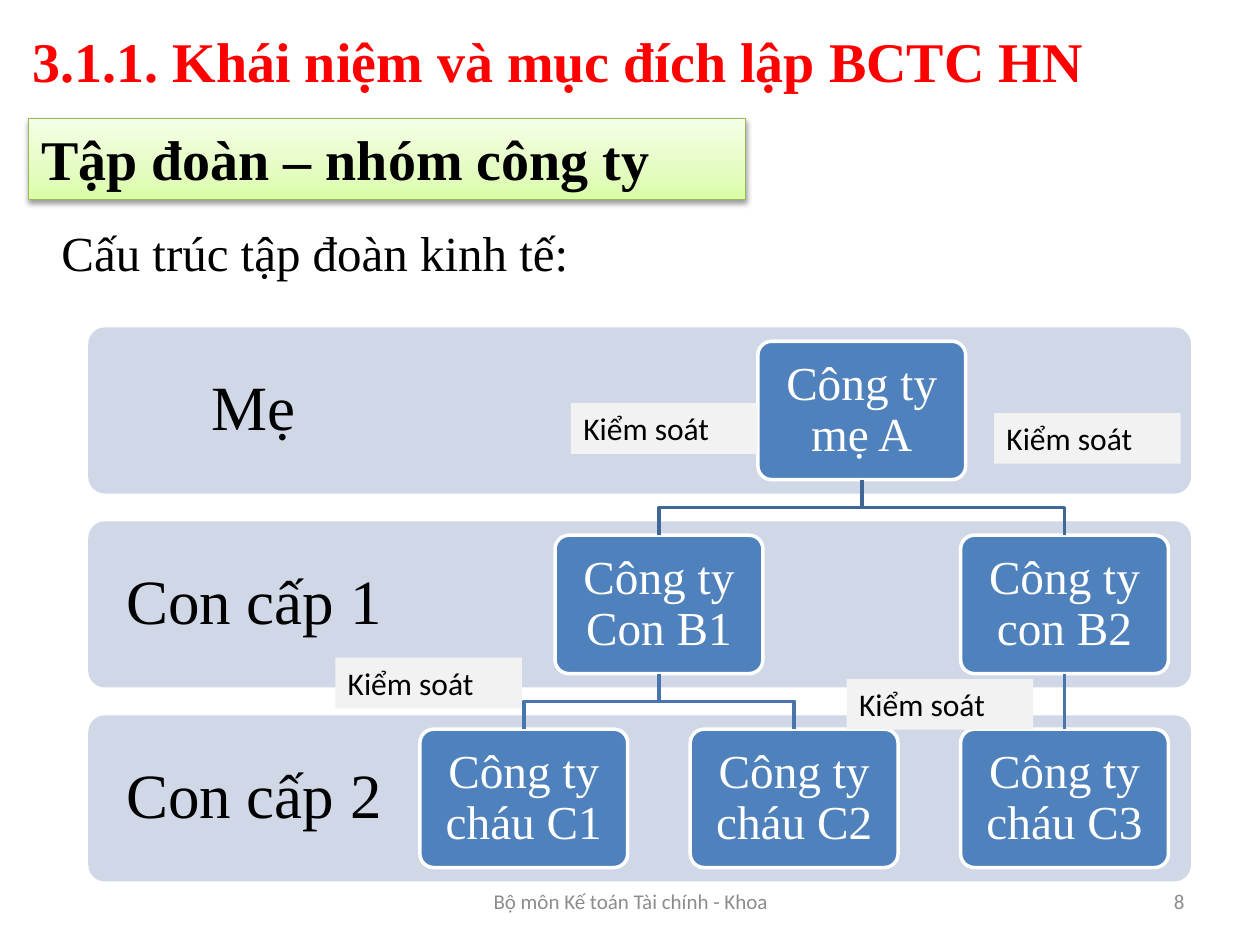
import copy
import lxml.etree
import pptx
import pptx.dml.color
import pptx.enum.shapes
import pptx.enum.text
import pptx.oxml
import pptx.oxml.ns
import pptx.util

Cm = pptx.util.Cm
Pt = pptx.util.Pt
RGB = pptx.dml.color.RGBColor.from_string
SHAPE = pptx.enum.shapes.MSO_SHAPE
ALIGN = pptx.enum.text.PP_ALIGN
ANCHOR = pptx.enum.text.MSO_ANCHOR
qn = pptx.oxml.ns.qn

COLORS = {
    "title": "FF0000",
    "text": "000000",
    "heading_line": "98B955",
    "band": "D0D8E8",
    "company": "4F81BD",
    "white": "FFFFFF",
    "link_1": "3F6797",
    "link_2": "4875AC",
    "control": "F2F2F2",
    "footer": "8C8C8C",
}
HEADING_STOPS = [(0, "DAFDA7"), (0.35, "E4FCC2"), (1, "F5FFE7")]
SERIF = "Times New Roman"
SANS = "Calibri"

presentation = pptx.Presentation()
presentation.slide_width = Cm(25.4)
presentation.slide_height = Cm(19.05)
slide = presentation.slides.add_slide(presentation.slide_layouts[6])
shapes = slide.shapes


def write(shape, text, size, font, color, align=ALIGN.LEFT, anchor=ANCHOR.TOP,
          margin=None, wrap=True):
    frame = shape.text_frame
    frame.word_wrap = wrap
    frame.vertical_anchor = anchor
    if margin is not None:
        frame.margin_left = frame.margin_right = Cm(margin)
        frame.margin_top = frame.margin_bottom = Cm(margin)
    paragraph = frame.paragraphs[0]
    paragraph.text = text
    paragraph.alignment = align
    paragraph.font.size = Pt(size)
    paragraph.font.name = font
    paragraph.font.color.rgb = RGB(COLORS[color])
    return paragraph


def add_block(kind, left, top, width, height, fill):
    block = shapes.add_shape(kind, Cm(left), Cm(top), Cm(width), Cm(height))
    block.shadow.inherit = False
    block.fill.solid()
    block.fill.fore_color.rgb = RGB(COLORS[fill])
    block.line.fill.background()
    if kind == SHAPE.ROUNDED_RECTANGLE:
        block.adjustments[0] = 0.1
    return block


title = shapes.add_textbox(Cm(0.41), Cm(0.41), Cm(21.87), Cm(1.63))
title_line = write(title, "3.1.1. Khái niệm và mục đích lập BCTC HN", 32, SERIF,
                   "title", wrap=False)
title_line.font.bold = True
title_line.space_before = Pt(12)

heading = add_block(SHAPE.RECTANGLE, 0.58, 2.39, 14.45, 1.63, "white")
heading.line.color.rgb = RGB(COLORS["heading_line"])
heading.line.width = Pt(0.75)
heading.fill.gradient()
heading.fill.gradient_angle = 90
heading_properties = heading._element.spPr
stop_list = heading_properties.find(".//" + qn("a:gsLst"))
stop_list.insert(1, copy.deepcopy(stop_list[0]))
for stop, (position, color) in zip(heading.fill.gradient_stops, HEADING_STOPS):
    stop.position = position
    stop.color.rgb = RGB(color)
effects = heading_properties.find(qn("a:effectLst"))
outer_shadow = lxml.etree.SubElement(
    effects, qn("a:outerShdw"), blurRad=str(Pt(3.1)), dist=str(Pt(1.6)),
    dir="5400000", rotWithShape="0")
shadow_color = lxml.etree.SubElement(outer_shadow, qn("a:srgbClr"), val=COLORS["text"])
lxml.etree.SubElement(shadow_color, qn("a:alpha"), val="38000")
write(heading, "Tập đoàn – nhóm công ty", 32, SERIF, "text").font.bold = True

intro = shapes.add_textbox(Cm(0.99), Cm(4.37), Cm(20.83), Cm(1.45))
write(intro, "Cấu trúc tập đoàn kinh tế:", 28, SERIF, "text")

BAND_LEFT, BAND_TOP, BAND_HEIGHT, BAND_PITCH = 1.78, 6.6, 3.35, 3.91
for level, name in enumerate(["Mẹ", "Con cấp 1", "Con cấp 2"]):
    top = BAND_TOP + level * BAND_PITCH
    add_block(SHAPE.ROUNDED_RECTANGLE, BAND_LEFT, top, 22.23, BAND_HEIGHT, "band")
    level_name = shapes.add_textbox(Cm(BAND_LEFT), Cm(top), Cm(6.68), Cm(BAND_HEIGHT))
    write(level_name, name, 36, SERIF, "text", ALIGN.CENTER, ANCHOR.MIDDLE,
          0.71).line_spacing = 0.9

COMPANY_WIDTH, COMPANY_HEIGHT = 4.19, 2.79
c1, c2, c3 = [10.56 + column * 5.45 for column in range(3)]
b1, b2 = (c1 + c2) / 2, c3
a = (b1 + b2) / 2
companies = {}
for key, name, level, center in [
    ("A", "Công ty mẹ A", 0, a),
    ("B1", "Công ty Con B1", 1, b1),
    ("B2", "Công ty con B2", 1, b2),
    ("C1", "Công ty cháu C1", 2, c1),
    ("C2", "Công ty cháu C2", 2, c2),
    ("C3", "Công ty cháu C3", 2, c3),
]:
    company = add_block(SHAPE.ROUNDED_RECTANGLE, center - COMPANY_WIDTH / 2,
                        BAND_TOP + 0.28 + level * BAND_PITCH,
                        COMPANY_WIDTH, COMPANY_HEIGHT, "company")
    company.line.color.rgb = RGB(COLORS["white"])
    company.line.width = Pt(2)
    write(company, name, 27, SERIF, "white", ALIGN.CENTER, ANCHOR.MIDDLE,
          0.28).line_spacing = 0.9
    companies[key] = company

for owner, owned, color in [
    ("A", "B1", "link_1"),
    ("A", "B2", "link_1"),
    ("B1", "C1", "link_2"),
    ("B1", "C2", "link_2"),
]:
    upper, lower = companies[owner], companies[owned]
    start_x = upper.left + upper.width // 2
    start_y = upper.top + upper.height
    end_x = lower.left + lower.width // 2
    middle_y = (start_y + lower.top) // 2
    route = shapes.build_freeform(start_x, start_y)
    route.add_line_segments(
        [(start_x, middle_y), (end_x, middle_y), (end_x, lower.top)], close=False)
    link = route.convert_to_shape()
    link.shadow.inherit = False
    link.fill.background()
    link.line.color.rgb = RGB(COLORS[color])
    link.line.width = Pt(2)

straight_link = shapes.add_connector(
    pptx.enum.shapes.MSO_CONNECTOR.STRAIGHT, 0, 0, 0, 0)
straight_link.begin_connect(companies["B2"], 2)
straight_link.end_connect(companies["C3"], 0)
straight_link.line.color.rgb = RGB(COLORS["link_2"])
straight_link.line.width = Pt(2)
lxml.etree.SubElement(straight_link._element.spPr, qn("a:effectLst"))

for left, top in [(11.51, 8.13), (20.04, 8.33), (6.76, 13.26), (17.07, 13.69)]:
    control = add_block(SHAPE.RECTANGLE, left, top, 3.76, 1.02, "control")
    write(control, "Kiểm soát", 18, SANS, "text")

for text, left, width, align in [
    ("8", 18.21, 5.92, ALIGN.RIGHT),
    ("Bộ môn Kế toán Tài chính - Khoa", 8.69, 8.05, ALIGN.CENTER),
]:
    footer = shapes.add_textbox(Cm(left), Cm(17.65), Cm(width), Cm(1.02))
    write(footer, text, 12, SANS, "footer", align, ANCHOR.MIDDLE)

presentation.save("out.pptx")
